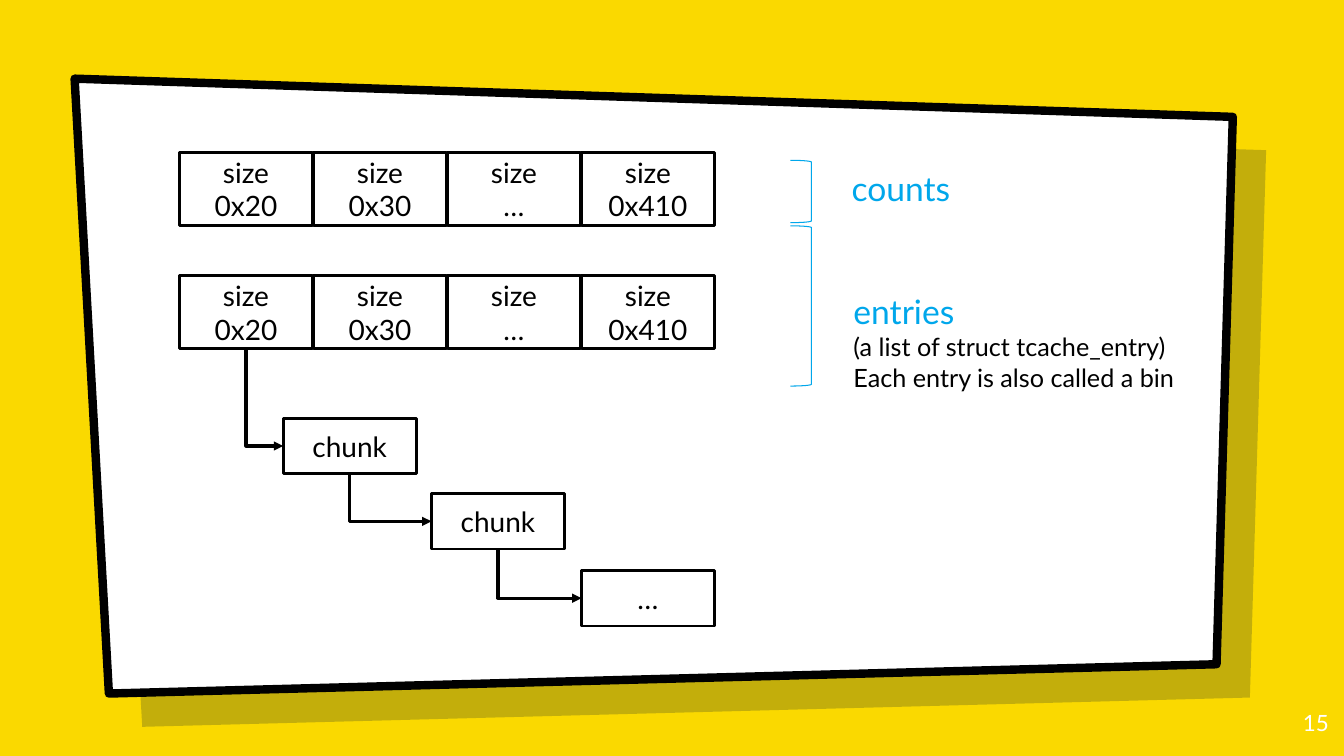
from lxml import etree
from pptx import Presentation
from pptx.dml.color import RGBColor
from pptx.enum import shapes, text
from pptx.oxml import ns
from pptx.util import Pt

BLACK, WHITE, YELLOW, BLUE, NAVY = "000000", "FFFFFF", "FAD900", "00A7EB", "001936"
SIZES = ["0x20", "0x30", "…", "0x410"]
CELL_LEFT, CELL_PITCH, BOX_WIDTH, CELL_HEIGHT, CHUNK_HEIGHT = 128.2, 95.7, 95, 52.6, 39.6
COUNTS_TOP, ENTRIES_TOP = 108.7, 196.6
CHUNKS = [("chunk", 202.3, 298.8), ("chunk", 308.2, 352.6), ("…", 415.3, 407.5)]
PANEL = [(53.3, 56.2), (880.6, 83.5), (869, 474.5), (77.8, 495.4)]
PANEL_SHADOW_OFFSET = 23.8


def color(value):
    """Turn a hex string into a colour."""
    return RGBColor.from_string(value)


def set_values(target, values):
    """Set attributes of an object from a dict."""
    for name, value in values.items():
        setattr(target, name, value)


def style_shape(shape, fill=None, line=None, width=0):
    """Give a shape a flat fill and outline."""
    shape.shadow.inherit = False
    if fill:
        shape.fill.solid()
        shape.fill.fore_color.rgb = color(fill)
    else:
        shape.fill.background()
    if line:
        shape.line.color.rgb = color(line)
        shape.line.width = Pt(width)
    else:
        shape.line.fill.background()


def write(shape, lines, alignment, **frame_values):
    """Write (text, size, colour) lines, one paragraph each."""
    frame = shape.text_frame
    set_values(frame, frame_values)
    for index, (words, size, tint) in enumerate(lines):
        paragraph = frame.add_paragraph() if index else frame.paragraphs[0]
        paragraph.alignment = alignment
        run = paragraph.add_run()
        run.text = words
        set_values(run.font, {"name": "Lato", "size": Pt(size)})
        run.font.color.rgb = color(tint)


def add_panel(slide, offset, **style):
    """Draw the slanted panel, moved by an offset."""
    corners = [(Pt(x + offset), Pt(y + offset)) for x, y in PANEL]
    builder = slide.shapes.build_freeform(*corners[0], scale=1.0)
    builder.add_line_segments(corners[1:], close=True)
    panel = builder.convert_to_shape()
    style_shape(panel, **style)
    return panel


def set_opacity(shape, percent):
    """Make the solid fill of a shape see-through."""
    fill_color = shape.fill._xPr.find(ns.qn("a:solidFill"))[0]
    etree.SubElement(fill_color, ns.qn("a:alpha"), val=str(percent * 1000))


def add_box(slide, left, top, height, *lines):
    """Draw an outlined box with centred text."""
    box = slide.shapes.add_shape(
        shapes.MSO_SHAPE.RECTANGLE, Pt(left), Pt(top), Pt(BOX_WIDTH), Pt(height))
    style_shape(box, WHITE, BLACK, 2)
    write(box, [(words, 20, BLACK) for words in lines], text.PP_ALIGN.CENTER,
          vertical_anchor=text.MSO_ANCHOR.MIDDLE)


def add_bent_arrow(slide, start_x, start_y, end_x, end_y):
    """Draw an arrow that runs down and then right."""
    across, down = end_x - start_x, end_y - start_y
    left = (start_x + end_x - down) / 2
    top = (start_y + end_y - across) / 2
    arrow = slide.shapes.add_connector(
        shapes.MSO_CONNECTOR.ELBOW, Pt(left + down), Pt(top), Pt(left), Pt(top + across))
    arrow.line.color.rgb = color(BLACK)
    arrow.line.width = Pt(2.25)
    properties = arrow._element.spPr
    properties.find(ns.qn("a:xfrm")).set("rot", "16200000")
    properties.find(ns.qn("a:prstGeom")).set("prst", "bentConnector2")
    etree.SubElement(arrow.line._get_or_add_ln(), ns.qn("a:tailEnd"), type="triangle")
    etree.SubElement(properties, ns.qn("a:effectLst"))


def add_bracket(slide, top, height):
    """Draw a blue right bracket."""
    bracket = slide.shapes.add_shape(
        shapes.MSO_SHAPE.RIGHT_BRACKET, Pt(564.5), Pt(top), Pt(15.1), Pt(height))
    style_shape(bracket, line=BLUE, width=0.75)


def add_label(slide, left, top, width, height, lines,
              alignment=text.PP_ALIGN.LEFT, **frame_values):
    """Add a text box."""
    label = slide.shapes.add_textbox(Pt(left), Pt(top), Pt(width), Pt(height))
    write(label, lines, alignment, **frame_values)


def main():
    """Build the slide and save it."""
    presentation = Presentation()
    set_values(presentation, {"slide_width": Pt(960), "slide_height": Pt(540)})
    slide = presentation.slides.add_slide(presentation.slide_layouts[6])
    slide.background.fill.solid()
    slide.background.fill.fore_color.rgb = color(YELLOW)

    set_opacity(add_panel(slide, PANEL_SHADOW_OFFSET, fill=NAVY), 22)
    add_panel(slide, 0, fill=WHITE, line=BLACK, width=6)

    margins = dict.fromkeys(
        ["margin_left", "margin_top", "margin_right", "margin_bottom"], Pt(7.2))
    add_label(slide, 898.6, 499, 57.6, 41, [("15", 16, WHITE)], text.PP_ALIGN.RIGHT,
              word_wrap=True, **margins)

    add_bracket(slide, 114.5, 44.6)
    add_bracket(slide, 161.3, 114.5)
    add_label(slide, 601.2, 116.6, 87.8, 36, [("counts", 24, BLUE)], word_wrap=False,
              auto_size=text.MSO_AUTO_SIZE.SHAPE_TO_FIT_TEXT)
    add_label(slide, 602.6, 204.5, 249.1, 79.9,
              [("entries", 24, BLUE),
               ("(a list of struct tcache_entry)", 18, BLACK),
               ("Each entry is also called a bin", 18, BLACK)],
              word_wrap=True, auto_size=text.MSO_AUTO_SIZE.SHAPE_TO_FIT_TEXT)

    for top in (COUNTS_TOP, ENTRIES_TOP):
        for column, size in enumerate(SIZES):
            add_box(slide, CELL_LEFT + column * CELL_PITCH, top, CELL_HEIGHT, "size", size)

    start_x, start_y = CELL_LEFT + BOX_WIDTH / 2, ENTRIES_TOP + CELL_HEIGHT
    for words, left, top in CHUNKS:
        add_box(slide, left, top, CHUNK_HEIGHT, words)
        add_bent_arrow(slide, start_x, start_y, left, top + CHUNK_HEIGHT / 2)
        start_x, start_y = left + BOX_WIDTH / 2, top + CHUNK_HEIGHT

    presentation.save("out.pptx")


if __name__ == "__main__":
    main()
